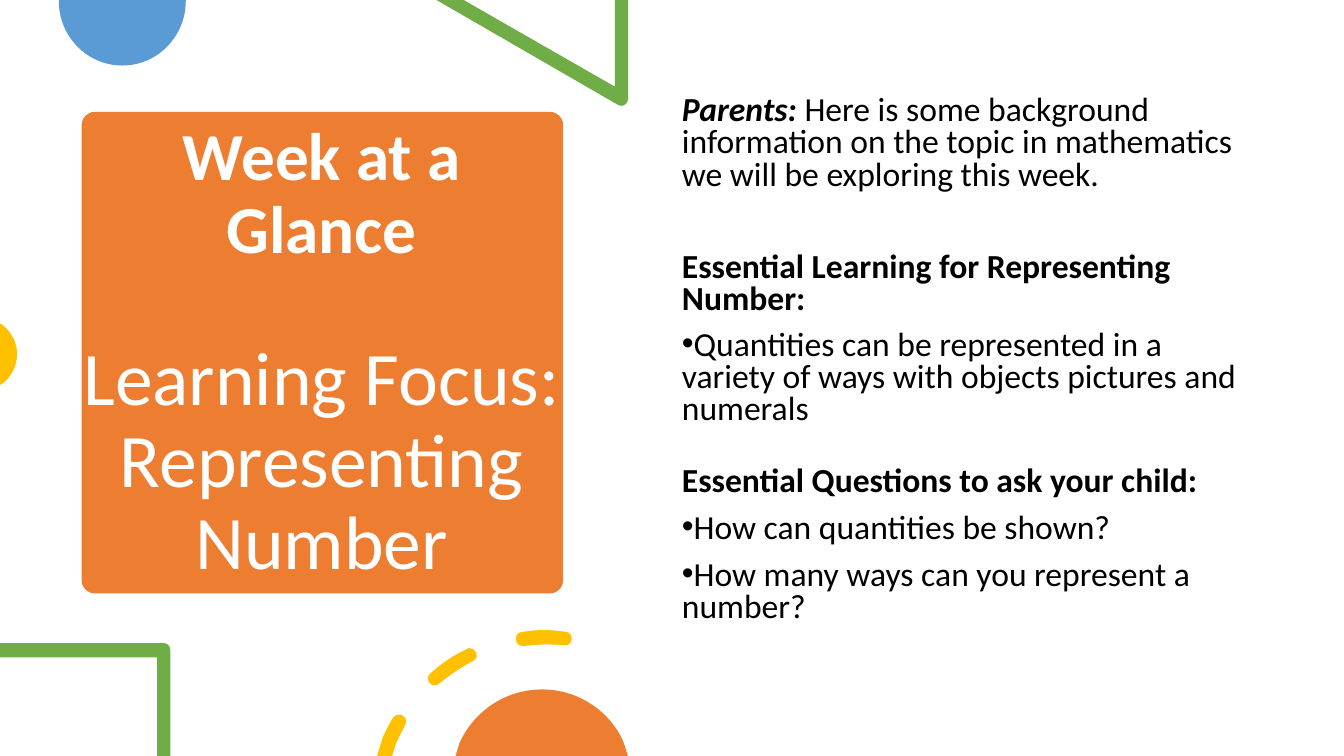
from lxml.etree import SubElement
from pptx import Presentation
from pptx.dml.color import RGBColor
from pptx.enum.shapes import MSO_SHAPE
from pptx.enum.text import MSO_ANCHOR, PP_ALIGN
from pptx.oxml.ns import qn
from pptx.util import Pt

ORANGE = RGBColor(0xED, 0x7D, 0x31)
BLUE = RGBColor(0x5B, 0x9B, 0xD5)
GREEN = RGBColor(0x70, 0xAD, 0x47)
GOLD = RGBColor(0xFF, 0xC0, 0x00)
WHITE = RGBColor(0xFF, 0xFF, 0xFF)
BLACK = RGBColor(0, 0, 0)

DISC = [(90.7, 0), (0, 0), (0, 0.7), (0, 25.9, 20.2, 46.8, 45.4, 46.8),
        (70.6, 46.8, 90.7, 25.9, 90.7, 0.7)]
WEDGE = [(136.8, 0), (127.4, 0), (127.4, 61.9), (19.4, 0), (0, 0), (129.6, 74.9),
         (130.3, 75.6, 131, 75.6, 131.8, 75.6), (134.6, 75.6, 136.8, 73.4, 136.8, 70.6)]
DOT = [(0, 0), (0, 43.9), (1.4, 43.2), (7.9, 38.2, 12.2, 31, 12.2, 21.6),
       (12.2, 13, 7.9, 5.8, 1.4, 0.7)]
FRAME = [(117.4, 0), (0, 0), (0, 10.1), (112.3, 10.1), (112.3, 80.6), (121.7, 80.6),
         (121.7, 5), (121.7, 2.2, 119.5, 0, 117.4, 0)]
DOME = [(61.9, 0), (35.3, 0, 13, 15.8, 2.9, 38.2), (0, 47.5), (123.1, 47.5),
        (120.2, 38.2), (110.9, 15.8, 87.8, 0, 61.9, 0)]
LOW_DASH = [(16.6, 60.5), (14.4, 59.8, 13, 61.2, 11.5, 62.6), (8.6, 67, 6.5, 72, 4.3, 76.3),
            (0, 90), (10.8, 90), (13.7, 80.6), (15.8, 76.3, 18, 72, 20.2, 67.7),
            (21.6, 65.5, 20.9, 61.9, 18, 61.2), (18, 60.5, 17.3, 60.5, 16.6, 60.5)]
MID_DASH = [(65.5, 13), (65.5, 13, 64.8, 13, 64.1, 13.7), (54.7, 18, 46.1, 23.8, 38.2, 31),
            (36, 32.4, 36, 36, 37.4, 37.4), (38.2, 38.9, 39.6, 39.6, 41, 39.6),
            (42.5, 39.6, 43.9, 38.9, 44.6, 38.2), (51.8, 32.4, 59.8, 26.6, 68.4, 22.3),
            (71.3, 20.9, 72, 18, 70.6, 15.8), (69.8, 13.7, 67.7, 13, 65.5, 13)]
TOP_DASH = [(119.5, 0), (113.8, 0, 108.7, 0.7, 103.7, 1.4), (100.8, 1.4, 98.6, 4.3, 99.4, 7.2),
            (99.4, 9.4, 101.5, 11.5, 104.4, 11.5), (104.4, 11.5, 104.4, 11.5, 105.1, 11.5),
            (114.5, 10.1, 123.8, 10.1, 133.9, 10.8), (136.1, 11.5, 139, 9.4, 139, 7.2),
            (139.7, 4.3, 137.5, 1.4, 135.4, 1.4), (129.6, 0.7, 124.6, 0, 119.5, 0)]

DECOR = [
    (42, 0, BLUE, [DISC]),
    (311.8, 0, GREEN, [WEDGE]),
    (0, 231.1, GOLD, [DOT]),
    (0, 459.4, GREEN, [FRAME]),
    (269.3, 450, GOLD, [LOW_DASH, MID_DASH, TOP_DASH]),
    (325.4, 492.5, ORANGE, [DOME]),
]

HEADS = [("Week at a Glance", 48, True, 0),
         ("Learning Focus:\vRepresenting Number", 54, False, 52)]

NOTES = [
    ([("Parents: ", True, True),
      ("Here is some background information on the topic in mathematics "
       "we will be exploring this week.", False, False)], 0, False),
    ([("Essential Learning for Representing Number:", True, False)], 43, False),
    ([("Quantities can be represented in a variety of ways with objects "
       "pictures and numerals", False, False)], 9.5, True),
    ([("Essential Questions to ask your child:", True, False)], 28.5, False),
    ([("How can quantities be shown?", False, False)], 10.5, True),
    ([("How many ways can you represent a number?", False, False)], 10, True),
]


def style(item, **values):
    """Set each named attribute on the item."""
    for name, value in values.items():
        setattr(item, name, value)


def paint(shape, color):
    """Give a shape a plain fill with no line or shadow."""
    shape.fill.solid()
    shape.fill.fore_color.rgb = color
    shape.line.fill.background()
    shape.shadow.inherit = False


def bend(shape, nodes):
    """Turn the segments that have control points into cubic curves."""
    outline = shape._element.find(".//" + qn("a:pathLst"))[0]
    parts = [part for part in outline if part.tag != qn("a:close")]
    for part, node in zip(parts, nodes):
        if len(node) == 6:
            curve = outline.makeelement(qn("a:cubicBezTo"))
            for x, y in (node[:2], node[2:4], node[4:]):
                SubElement(curve, qn("a:pt"), x=str(Pt(x)), y=str(Pt(y)))
            outline.replace(part, curve)


def add_decor(slide, left, top, color, loops):
    """Draw one filled outline from its loops at the given corner."""
    first, *others = [[(Pt(node[-2]), Pt(node[-1])) for node in loop] for loop in loops]
    builder = slide.shapes.build_freeform(*first[0])
    builder.add_line_segments(first[1:], close=True)
    for loop in others:
        builder.move_to(*loop[0])
        builder.add_line_segments(loop[1:], close=True)
    shape = builder.convert_to_shape(Pt(left), Pt(top))
    bend(shape, sum(loops, []))
    paint(shape, color)


def add_text(slide, left, top, width, height, anchor):
    """Add a wrapping text box and return its frame."""
    box = slide.shapes.add_textbox(Pt(left), Pt(top), Pt(width), Pt(height))
    style(box.text_frame, word_wrap=True, vertical_anchor=anchor)
    return box.text_frame


def add_title(slide, left, top, width, height):
    """Place the orange card and its centred title."""
    card = slide.shapes.add_shape(MSO_SHAPE.ROUNDED_RECTANGLE, Pt(left), Pt(top),
                                  Pt(width), Pt(height))
    card.adjustments[0] = 0.028
    paint(card, ORANGE)
    frame = add_text(slide, left - 8, top + 9, width + 15, height - 16, MSO_ANCHOR.MIDDLE)
    for index, (text, size, bold, space) in enumerate(HEADS):
        line = frame.add_paragraph() if index else frame.paragraphs[0]
        line.text = text
        style(line, alignment=PP_ALIGN.CENTER, line_spacing=0.9, space_before=Pt(space))
        for run in line.runs:
            style(run.font, name="Calibri", size=Pt(size), bold=bold)
            run.font.color.rgb = WHITE


def add_notes(slide, left, top, width, height):
    """Place the notes for parents with headings and bullets."""
    frame = add_text(slide, left, top, width, height, MSO_ANCHOR.TOP)
    for index, (runs, space, dotted) in enumerate(NOTES):
        line = frame.add_paragraph() if index else frame.paragraphs[0]
        style(line, line_spacing=0.8, space_before=Pt(space))
        if dotted:
            props = line._p.get_or_add_pPr()
            props.set("marL", "0")
            props.set("indent", str(-Pt(18)))
            SubElement(props, qn("a:buFont"), typeface="Arial")
            SubElement(props, qn("a:buChar"), char="•")
        for text, bold, italic in runs:
            run = line.add_run()
            run.text = text
            style(run.font, name="Calibri", size=Pt(24), bold=bold, italic=italic)
            run.font.color.rgb = BLACK


def main():
    """Build and save the slide."""
    deck = Presentation()
    style(deck, slide_width=Pt(960), slide_height=Pt(540))
    slide = deck.slides.add_slide(deck.slide_layouts[6])
    add_title(slide, 58.3, 79.9, 344, 344)
    for left, top, color, loops in DECOR:
        add_decor(slide, left, top, color, loops)
    add_notes(slide, 480, 64.8, 414, 402.5)
    deck.save("out.pptx")


if __name__ == "__main__":
    main()
